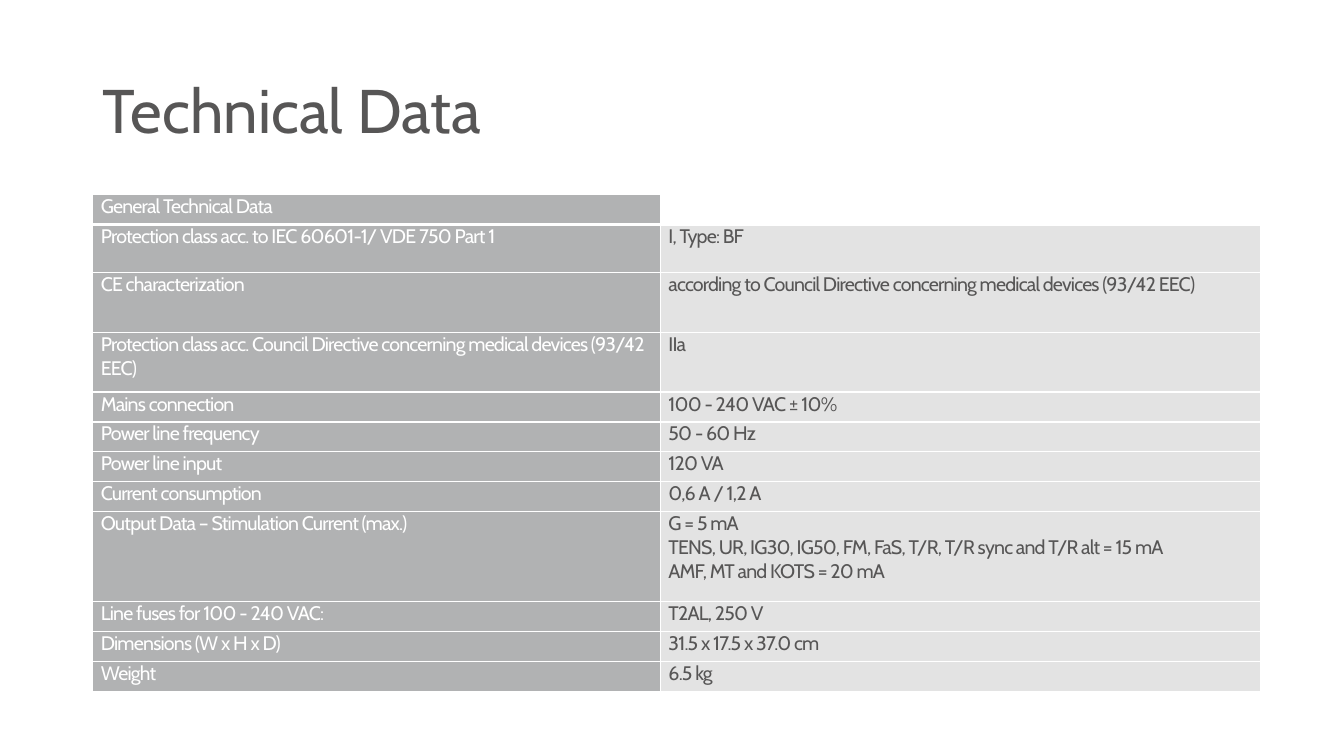
from lxml import etree
from pptx import Presentation
from pptx import util as u
from pptx.dml.color import RGBColor
from pptx.enum import text
from pptx.oxml.ns import qn

WHITE = RGBColor(0xFF, 0xFF, 0xFF)
INK = RGBColor(0x57, 0x56, 0x56)
LABEL_FILL = RGBColor(0xB1, 0xB2, 0xB3)
VALUE_FILL = RGBColor(0xE3, 0xE3, 0xE3)
FONT = "Cabin"

LEFT = u.Inches(0.92)
COLUMNS = (u.Inches(5.63), u.Inches(5.95))
ROW = u.Inches(0.297)

# label, value lines, height in rows
DATA = [
    ("General Technical Data", "", 1),
    ("Protection class acc. to IEC 60601-1/ VDE 750 Part 1", "I, Type: BF", 1.6),
    ("CE characterization",
     "according to Council Directive concerning medical devices (93/42 EEC)", 2),
    ("Protection class acc. Council Directive concerning medical devices (93/42 EEC)",
     "IIa", 2),
    ("Mains connection", "100 - 240 VAC ± 10%", 1),
    ("Power line frequency", "50 - 60 Hz", 1),
    ("Power line input", "120 VA", 1),
    ("Current consumption", "0,6 A / 1,2 A", 1),
    ("Output Data – Stimulation Current (max.)",
     "G = 5 mA\n"
     "TENS, UR, IG30, IG50, FM, FaS, T/R, T/R sync and T/R alt = 15 mA\n"
     "AMF, MT and KOTS = 20 mA", 3),
    ("Line fuses for 100 - 240 VAC:", "T2AL, 250 V", 1),
    ("Dimensions (W x H x D)", "31.5 x 17.5 x 37.0 cm", 1),
    ("Weight", "6.5 kg", 1),
]


def style_paragraph(p, size, color):
    p.font.name = FONT
    p.font.size = u.Pt(size)
    p.font.color.rgb = color


def add_title(s, title):
    box = s.shapes.add_textbox(LEFT, u.Inches(0.4), u.Inches(8.35), u.Inches(1.45))
    tf = box.text_frame
    tf.word_wrap = True
    tf.vertical_anchor = text.MSO_ANCHOR.MIDDLE
    p = tf.paragraphs[0]
    p.text = title
    p.line_spacing = 0.9
    style_paragraph(p, 44, INK)


def set_borders(cell, bottom):
    """Draw white cell borders, 1 pt wide except for the bottom one."""
    tc_pr = cell._tc.get_or_add_tcPr()
    for i, (side, width) in enumerate(zip("LRTB", (1, 1, 1, bottom))):
        ln = etree.Element(qn(f"a:ln{side}"), w=str(u.Pt(width)))
        fill = etree.SubElement(ln, qn("a:solidFill"))
        etree.SubElement(fill, qn("a:srgbClr"), val=str(WHITE))
        tc_pr.insert(i, ln)


def fill_cell(cell, content, color, fill, bottom):
    cell.margin_left = cell.margin_right = u.Inches(0.08)
    cell.margin_top = cell.margin_bottom = 0
    cell.text = content
    for p in cell.text_frame.paragraphs:
        style_paragraph(p, 14, color)
        p._p.pPr.find(qn("a:defRPr")).set("spc", "-60")
    if content:
        cell.fill.solid()
        cell.fill.fore_color.rgb = fill
    else:
        cell.fill.background()
    set_borders(cell, bottom)


def add_data_table(s):
    height = int(ROW * sum(rows for *_, rows in DATA))
    table = s.shapes.add_table(len(DATA), len(COLUMNS), LEFT, u.Inches(1.93),
                               sum(COLUMNS), height).table
    table.first_row = table.horz_banding = False
    for column, width in zip(table.columns, COLUMNS):
        column.width = width
    for i, (label, value, rows) in enumerate(DATA):
        table.rows[i].height = int(ROW * rows)
        bottom = 3 if i == 0 else 1
        fill_cell(table.cell(i, 0), label, WHITE, LABEL_FILL, bottom)
        fill_cell(table.cell(i, 1), value, INK, VALUE_FILL, bottom)


def main():
    prs = Presentation()
    prs.slide_width, prs.slide_height = u.Inches(13.33), u.Inches(7.5)
    s = prs.slides.add_slide(prs.slide_layouts[6])
    add_data_table(s)
    add_title(s, "Technical Data")
    prs.save("out.pptx")


if __name__ == "__main__":
    main()
